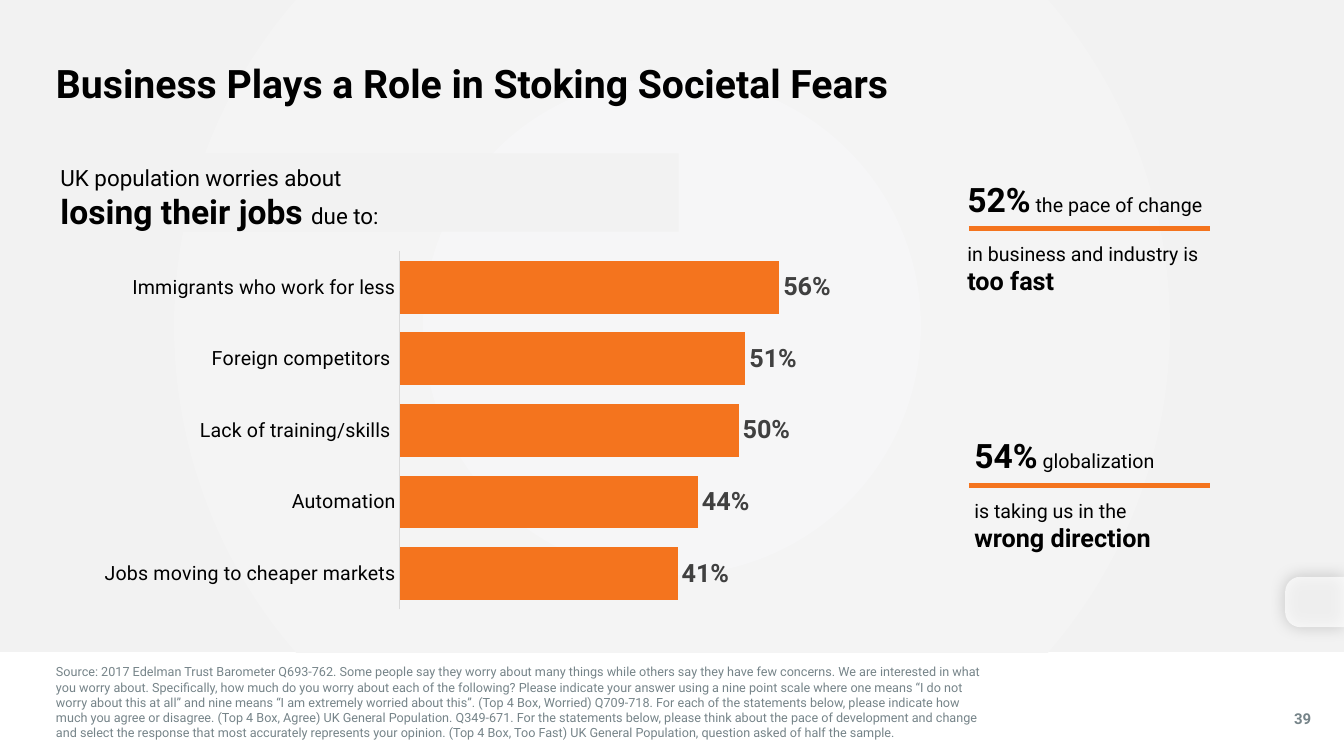
from dataclasses import dataclass

from pptx import Presentation
from pptx.chart.data import CategoryChartData as ChartData
from pptx.dml.color import RGBColor as RGB
from pptx.enum.chart import XL_CHART_TYPE as Chart, XL_LABEL_POSITION as Spot
from pptx.enum.chart import XL_TICK_MARK as Tick
from pptx.enum.shapes import MSO_CONNECTOR as Link, MSO_SHAPE as Shape
from pptx.enum.text import MSO_ANCHOR as Anchor, PP_ALIGN as Align
from pptx.oxml import parse_xml
from pptx.oxml.ns import nsdecls, qn
from pptx.util import Pt


@dataclass(frozen=True)
class Theme:
    face: str = "Roboto"
    ink: str = "000000"
    gray: str = "768489"
    dark: str = "404040"
    pale: str = "F2F2F2"
    glow: str = "F6F6F7"
    white: str = "FFFFFF"
    rule: str = "D9D9D9"
    accent: str = "F4741E"
    title: float = 28
    big: float = 24
    strong: float = 18
    lead: float = 16
    body: float = 14
    base: float = 12
    page: float = 10.7
    note: float = 9


T = Theme()
WIDE, HIGH = 960, 540

NOTE = (
    "Source: 2017 Edelman Trust Barometer Q693-762. Some people say they worry about many "
    "things while others say they have few concerns. We are interested in what you worry about. "
    "Specifically, how much do you worry about each of the following? Please indicate your answer "
    "using a nine point scale where one means “I do not worry about this at all” and nine means "
    "“I am extremely worried about this”. (Top 4 Box, Worried) Q709-718. For each of the "
    "statements below, please indicate how much you agree or disagree. (Top 4 Box, Agree) UK "
    "General Population. Q349-671. For the statements below, please think about the pace of "
    "development and change and select the response that most accurately represents your opinion. "
    "(Top 4 Box, Too Fast) UK General Population, question asked of half the sample."
)
FEARS = {
    "Jobs moving to cheaper markets": 0.41,
    "Automation": 0.44,
    "Lack of training/skills ": 0.50,
    "Foreign competitors ": 0.51,
    "Immigrants who work for less": 0.56,
}


def pts(*box):
    return [Pt(n) for n in box]


def style(font, size, bold=False, color=T.ink):
    font.name, font.size, font.bold = T.face, Pt(size), bold
    font.color.rgb = RGB.from_string(color)


def write(shape, paras, color=T.ink, anchor=Anchor.TOP, align=Align.LEFT, gap=0):
    """Each paragraph is a list of (text, size, bold) runs."""
    frame = shape.text_frame
    frame.word_wrap, frame.vertical_anchor = True, anchor
    frame.margin_left = frame.margin_top = frame.margin_right = frame.margin_bottom = 0
    for i, runs in enumerate(paras):
        para = frame.add_paragraph() if i else frame.paragraphs[0]
        para.alignment = align
        if i and gap:
            para.space_before = Pt(gap)
        for text, size, bold in runs:
            run = para.add_run()
            run.text = text
            style((para if len(runs) == 1 else run).font, size, bold, color)


def text(slide, box, paras, **look):
    shape = slide.shapes.add_textbox(*pts(*box))
    write(shape, paras, **look)
    return shape


def backdrop(slide, box):
    panel = slide.shapes.add_shape(Shape.RECTANGLE, *pts(*box))
    panel.shadow.inherit = False
    panel.line.fill.background()
    panel.fill.gradient()
    for stop, color in zip(panel.fill.gradient_stops, (T.glow, T.pale)):
        stop.color.rgb = RGB.from_string(color)
    lin = next(panel.element.iter(qn("a:lin")))
    lin.getparent().replace(lin, parse_xml(
        f'<a:path {nsdecls("a")} path="circle">'
        '<a:fillToRect l="50000" t="50000" r="50000" b="50000"/></a:path>'))
    # Behind the title
    panel.element.getparent().insert(2, panel.element)


def heading(slide, box):
    title = slide.shapes.title
    title.left, title.top, title.width, title.height = pts(*box)
    write(title, [[("Business Plays a Role in Stoking Societal Fears", T.title, True)]],
          anchor=Anchor.MIDDLE)


def intro(slide, box):
    lead = text(slide, box, [
        [("UK population worries about", T.lead, False)],
        [("losing their jobs ", T.big, True), ("due to:", T.lead, False)],
    ], anchor=Anchor.BOTTOM)
    lead.fill.solid()
    lead.fill.fore_color.rgb = RGB.from_string(T.pale)


def bars(slide, box):
    data = ChartData(number_format="0%")
    data.categories = list(FEARS)
    data.add_series("Series 1", list(FEARS.values()))
    chart = slide.shapes.add_chart(Chart.BAR_CLUSTERED, *pts(*box), data).chart
    chart.has_legend = chart.has_title = False
    style(chart.font, T.base)

    # Axes
    cats, vals = chart.category_axis, chart.value_axis
    cats.major_tick_mark = cats.minor_tick_mark = Tick.NONE
    cats.has_major_gridlines = vals.has_major_gridlines = False
    style(cats.tick_labels.font, T.body)
    cats.format.line.color.rgb = RGB.from_string(T.rule)
    cats.format.line.width = Pt(0.75)
    vals.minimum_scale, vals.maximum_scale, vals.visible = 0, 0.6, False

    # Bars and labels
    plot = chart.plots[0]
    plot.gap_width, plot.vary_by_categories = 36, False
    fill = plot.series[0].format.fill
    fill.solid()
    fill.fore_color.rgb = RGB.from_string(T.accent)
    plot.has_data_labels = True
    labels = plot.data_labels
    labels.show_value, labels.position = True, Spot.OUTSIDE_END
    labels.number_format, labels.number_format_is_linked = "0%", False
    style(labels.font, T.strong, True, T.dark)

    # Plot area
    area = next(chart.element.iter(qn("c:plotArea")))
    for old in area.findall(qn("c:layout")):
        area.remove(old)
    sizes = "".join(f'<c:{k} val="{v}"/>' for k, v in
                    zip("xywh", (0.41, 0.04, 0.54, 0.92)))
    area.insert(0, parse_xml(
        f'<c:layout {nsdecls("c")}><c:manualLayout><c:layoutTarget val="inner"/>'
        f'<c:xMode val="edge"/><c:yMode val="edge"/>{sizes}</c:manualLayout></c:layout>'))


def callout(slide, box, share, topic, claim, end):
    text(slide, box, [
        [(share, T.big, True), (topic, T.body, False)],
        [(claim, T.body, False), (end, T.strong, True)],
    ], gap=16.4)
    y = box[1] + 36
    rule = slide.shapes.add_connector(Link.STRAIGHT, *pts(692, y, 864.5, y))
    rule.line.color.rgb = RGB.from_string(T.accent)
    rule.line.width = Pt(3.5)
    rule.element.spPr.append(parse_xml(f'<a:effectLst {nsdecls("a")}/>'))


def tab(slide, box):
    x, y, w, h = box
    # Turned a quarter, so width and height trade places
    knob = slide.shapes.add_shape(Shape.ROUND_2_SAME_RECTANGLE,
                                  *pts(x + (w - h) / 2, y + (h - w) / 2, h, w))
    knob.rotation = 270
    knob.adjustments[0], knob.adjustments[1] = 0.3, 0
    knob.line.fill.background()
    knob.fill.solid()
    knob.fill.fore_color.rgb = RGB.from_string(T.white)
    tint = next(knob.element.spPr.iter(qn("a:srgbClr")))
    tint.append(parse_xml(f'<a:alpha {nsdecls("a")} val="72000"/>'))
    knob.element.spPr.append(parse_xml(
        f'<a:effectLst {nsdecls("a")}><a:outerShdw blurRad="{Pt(12)}" dist="0" '
        f'rotWithShape="0"><a:srgbClr val="{T.ink}"><a:alpha val="25000"/></a:srgbClr>'
        '</a:outerShdw></a:effectLst>'))


def footer(slide, box):
    x, y, w, h = box
    text(slide, (x, y, 663, h), [[(NOTE, T.note, False)]], color=T.gray)
    text(slide, (x + w - 25, y + 32.5, 25, h), [[("39", T.page, True)]],
         color=T.gray, align=Align.CENTER)


def main():
    deck = Presentation()
    deck.slide_width, deck.slide_height = pts(WIDE, HIGH)
    slide = deck.slides.add_slide(deck.slide_layouts[5])
    backdrop(slide, (0, 0, WIDE, 466))
    heading(slide, (40, 41, 663, 37))
    footer(slide, (40, 474.5, 903, 37.5))
    intro(slide, (43.2, 109.5, 441.5, 56))
    callout(slide, (696, 311, 160, 50), "54%", " globalization",
            "is taking us in the ", "wrong direction")
    callout(slide, (691, 127.5, 188.5, 71), "52%", " the pace of change",
            "in business and industry is ", "too fast")
    bars(slide, (65, 168.5, 538, 278))
    tab(slide, (918, 412, 42, 36))
    deck.save("out.pptx")


if __name__ == "__main__":
    main()
